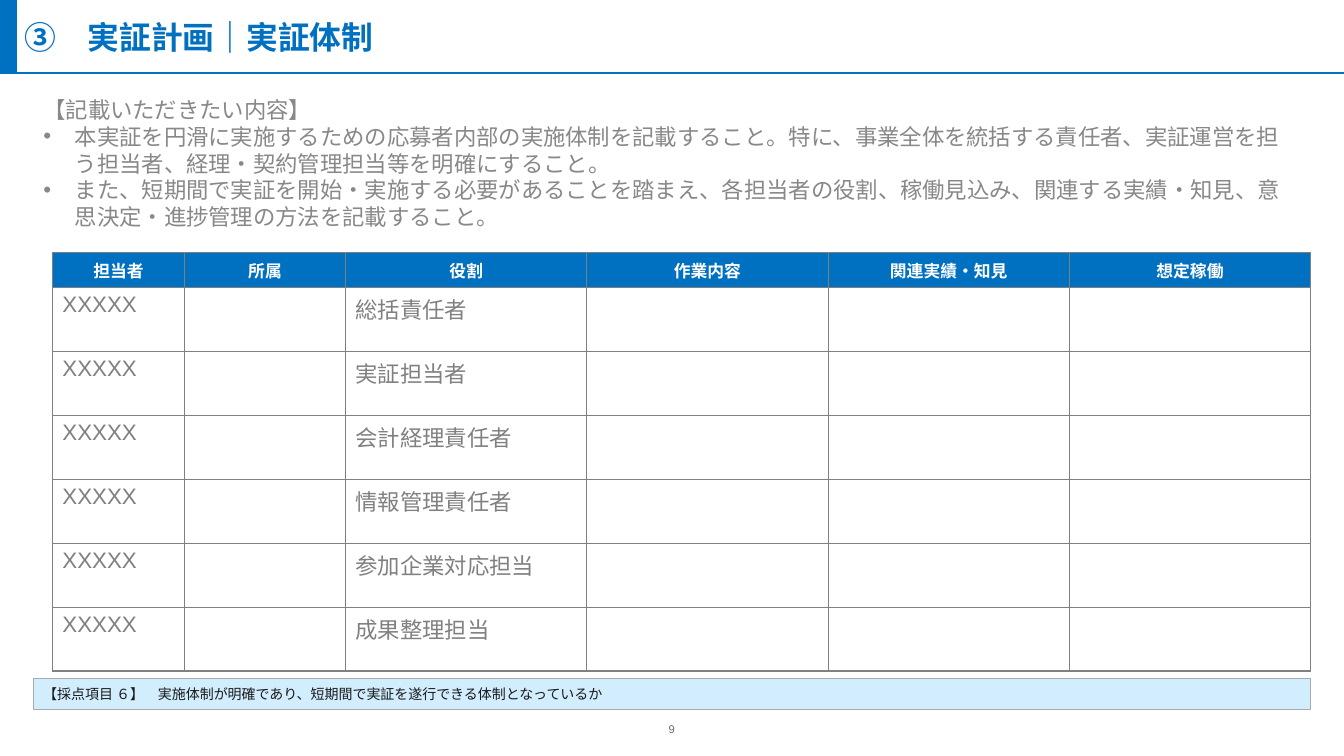
from dataclasses import dataclass
from lxml.etree import SubElement
from pptx import Presentation
from pptx.dml.color import RGBColor as RGB
from pptx.enum.shapes import MSO_CONNECTOR as CONN, MSO_SHAPE as SHAPE
from pptx.enum.text import MSO_ANCHOR as ANCHOR, MSO_AUTO_SIZE as AUTO, PP_ALIGN as ALIGN
from pptx.oxml.ns import qn
from pptx.util import Cm, Pt

TITLE = "③　実証計画｜実証体制"
LEAD = "【記載いただきたい内容】"
REQUESTS = [
    "本実証を円滑に実施するための応募者内部の実施体制を記載すること。特に、事業全体を統括する責任者、"
    "実証運営を担う担当者、経理・契約管理担当等を明確にすること。",
    "また、短期間で実証を開始・実施する必要があることを踏まえ、各担当者の役割、稼働見込み、"
    "関連する実績・知見、意思決定・進捗管理の方法を記載すること。",
]
HEADERS = ["担当者", "所属", "役割", "作業内容", "関連実績・知見", "想定稼働"]
PERSON = "XXXXX"
ROLES = ["総括責任者", "実証担当者", "会計経理責任者", "情報管理責任者", "参加企業対応担当", "成果整理担当"]
CRITERION = "【採点項目 ６】　実施体制が明確であり、短期間で実証を遂行できる体制となっているか　"
PAGE = "9"

COL_WIDTHS = [3.33, 4.06] + [6.08] * 4
HEADER_HEIGHT, ROW_HEIGHT = 0.88, 1.61
BULLET_INDENT = Cm(0.79)


@dataclass(frozen=True)
class Theme:
    """Colours, fonts and type sizes of the slide."""
    blue: str = "0070C0"
    white: str = "FFFFFF"
    guide: str = "888888"
    grid: str = "808080"
    note_fill: str = "D1EDFE"
    note_line: str = "AAAAAA"
    ink: str = "1A1A1A"
    page: str = "6B6B6B"
    latin: str = "Arial"
    cjk: str = "Noto Sans CJK JP"
    title_size: float = 22.7
    body_size: float = 16
    header_size: float = 12
    note_size: float = 10
    page_size: float = 8
    line_pitch: float = 19.2


T = Theme()


def style(p, size, color, font=T.cjk, bold=False, align=ALIGN.LEFT):
    """Format a paragraph and its runs."""
    p.alignment = align
    for r in p.runs:
        r.font.size, r.font.bold, r.font.name = Pt(size), bold, font
        r.font.color.rgb = RGB.from_string(color)
        SubElement(r.font._element, qn("a:ea"), typeface=T.cjk)


def place(s, left, top, width, height):
    """Move and size a shape, in centimetres."""
    s.left, s.top, s.width, s.height = Cm(left), Cm(top), Cm(width), Cm(height)


def frame(s, anchor, inset=True):
    """Prepare the text frame of a shape."""
    tf = s.text_frame
    tf.word_wrap, tf.auto_size, tf.vertical_anchor = True, AUTO.NONE, anchor
    if not inset:
        tf.margin_left = tf.margin_right = tf.margin_top = tf.margin_bottom = 0
    return tf


def add_box(slide, box, fill, line, width):
    """Add a filled, outlined rectangle."""
    s = slide.shapes.add_shape(SHAPE.RECTANGLE, *map(Cm, box))
    s.shadow.inherit = False
    s.fill.solid()
    s.fill.fore_color.rgb = RGB.from_string(fill)
    s.line.color.rgb = RGB.from_string(line)
    s.line.width = Pt(width)
    return s


def add_heading(slide):
    """Place the title with its blue block and rule."""
    add_box(slide, (0, 0, 0.41, 1.85), T.blue, T.blue, 1)
    s = slide.shapes.title
    place(s, 0.61, 0.1, 32.18, 1.63)
    tf = frame(s, ANCHOR.MIDDLE, inset=False)
    tf.text = TITLE
    style(tf.paragraphs[0], T.title_size, T.blue, bold=True)
    rule = slide.shapes.add_connector(CONN.STRAIGHT, 0, Cm(1.85), Cm(33.87), Cm(1.85))
    rule.line.color.rgb = RGB.from_string(T.blue)
    rule.line.width = Pt(1.5)
    SubElement(rule._element.spPr, qn("a:effectLst"))


def add_requests(slide):
    """Fill the body with the lead line and bulleted requests."""
    s = slide.placeholders[1]
    place(s, 0.84, 2.29, 32.18, 3.68)
    tf = frame(s, ANCHOR.TOP)
    tf.text = "\n".join([LEAD] + REQUESTS)
    for i, p in enumerate(tf.paragraphs):
        pPr = p._p.get_or_add_pPr()
        indent = BULLET_INDENT if i else 0
        pPr.set("marL", str(indent))
        pPr.set("indent", str(-indent))
        if i:
            SubElement(pPr, qn("a:buFont"), typeface=T.latin)
            SubElement(pPr, qn("a:buChar"), char="•")
        else:
            SubElement(pPr, qn("a:buNone"))
        p.space_before = Pt(0)
        p.line_spacing = Pt(T.line_pitch)
        style(p, T.body_size, T.guide)


def add_borders(cell):
    """Draw the four borders of a table cell."""
    tcPr = cell._tc.get_or_add_tcPr()
    for side in "LRTB":
        ln = SubElement(tcPr, qn(f"a:ln{side}"), w=str(Pt(1)))
        SubElement(SubElement(ln, qn("a:solidFill")), qn("a:srgbClr"), val=T.grid)


def add_team_table(slide):
    """Add the table of people and roles."""
    rows = [HEADERS] + [[PERSON, "", role, "", "", ""] for role in ROLES]
    heights = [HEADER_HEIGHT] + [ROW_HEIGHT] * len(ROLES)
    box = (1.32, 6.37, sum(COL_WIDTHS), sum(heights))
    table = slide.shapes.add_table(len(rows), len(HEADERS), *map(Cm, box)).table
    table.horz_banding = False
    for col, width in zip(table.columns, COL_WIDTHS):
        col.width = Cm(width)
    for i, (row, height, texts) in enumerate(zip(table.rows, heights, rows)):
        row.height = Cm(height)
        for cell, text in zip(row.cells, texts):
            add_borders(cell)
            cell.text = text
            p = cell.text_frame.paragraphs[0]
            if i:
                cell.fill.background()
                style(p, T.body_size, T.grid, T.latin)
            else:
                cell.fill.solid()
                cell.fill.fore_color.rgb = RGB.from_string(T.blue)
                style(p, T.header_size, T.white, T.latin, True, ALIGN.CENTER)


def add_footer(slide):
    """Add the scoring criterion and page number."""
    s = add_box(slide, (0.84, 17.09, 32.18, 0.79), T.note_fill, T.note_line, 0.5)
    tf = frame(s, ANCHOR.MIDDLE)
    tf.text = CRITERION
    style(tf.paragraphs[0], T.note_size, T.ink)
    s = slide.shapes.add_textbox(*map(Cm, (16.51, 18.24, 0.84, 0.25)))
    tf = frame(s, ANCHOR.MIDDLE, inset=False)
    tf.text = PAGE
    style(tf.paragraphs[0], T.page_size, T.page, T.latin, align=ALIGN.CENTER)


def main():
    """Build and save the slide."""
    prs = Presentation()
    prs.slide_width, prs.slide_height = Cm(33.87), Cm(19.05)
    slide = prs.slides.add_slide(prs.slide_layouts[1])
    add_heading(slide)
    add_requests(slide)
    add_team_table(slide)
    add_footer(slide)
    prs.save("out.pptx")


if __name__ == "__main__":
    main()
